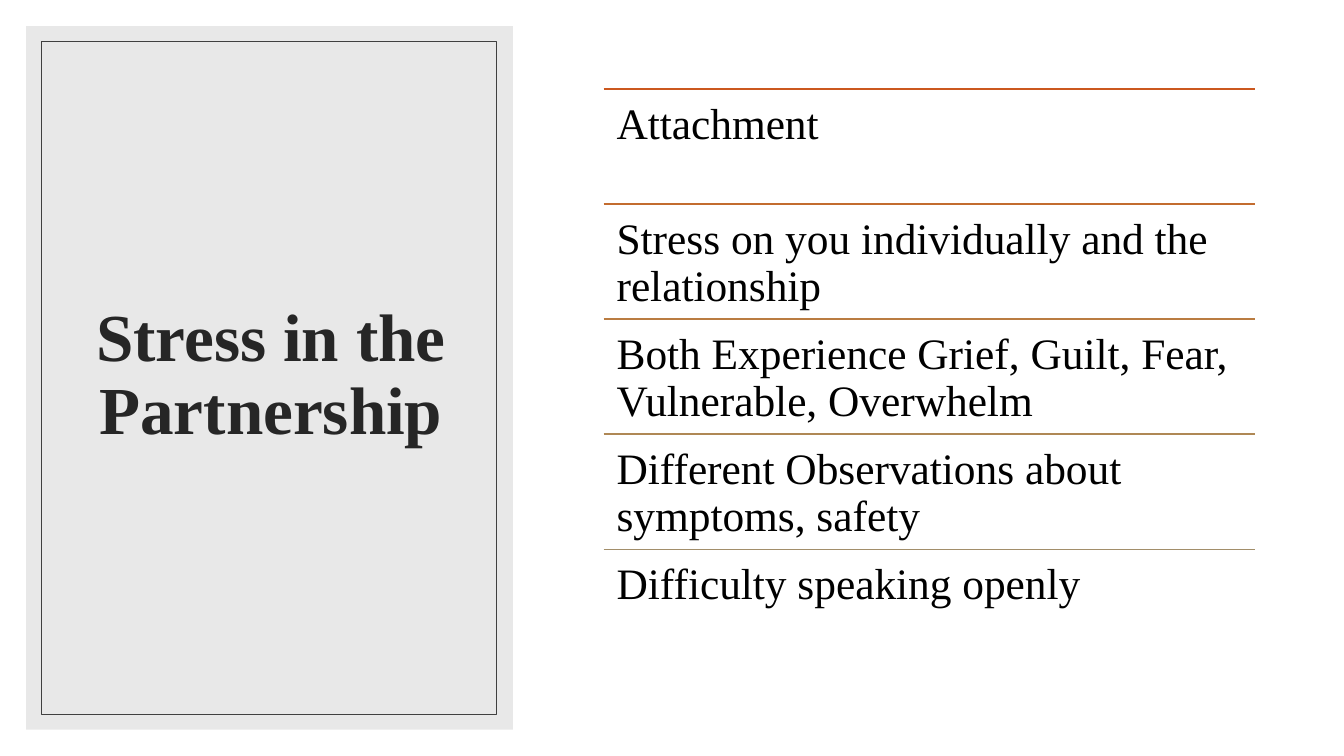
"""Build the slide about stress in the partnership."""
from dataclasses import dataclass
from typing import Any

import lxml.etree
import pptx
import pptx.dml.color
import pptx.enum.shapes
import pptx.enum.text
import pptx.oxml.ns
import pptx.util

Cm = pptx.util.Cm
Pt = pptx.util.Pt
qn = pptx.oxml.ns.qn

FONT = "Times New Roman"
ROW_LEFT, ROW_TOP, ROW_WIDTH, ROW_HEIGHT = 15.21, 2.24, 16.41, 2.9


@dataclass
class Topic:
    text: str
    rule_color: str


TOPICS = [
    Topic("Attachment", "CB581F"),
    Topic("Stress on you individually and the relationship", "C36C2F"),
    Topic("Both Experience Grief, Guilt, Fear, Vulnerable, Overwhelm", "BA7C41"),
    Topic("Different Observations about symptoms, safety", "AF8855"),
    Topic("Difficulty speaking openly", "A28E6A"),
]


def rgb(value: str) -> pptx.dml.color.RGBColor:
    return pptx.dml.color.RGBColor.from_string(value)


def set_attrs(obj: Any, values: dict[str, Any]) -> None:
    for name, value in values.items():
        setattr(obj, name, value)


def write(tf: Any, text: str, size: float, color: str, bold: bool, align: Any) -> None:
    p = tf.paragraphs[0]
    set_attrs(p, {"alignment": align, "line_spacing": 0.9})
    r = p.add_run()
    r.text = text
    set_attrs(r.font, {"name": FONT, "size": Pt(size), "bold": bold})
    r.font.color.rgb = rgb(color)


def add_rect(s: Any, left: float, top: float, width: float, height: float) -> Any:
    sp = s.shapes.add_shape(pptx.enum.shapes.MSO_SHAPE.RECTANGLE,
                            Cm(left), Cm(top), Cm(width), Cm(height))
    sp.shadow.inherit = False
    return sp


def add_panel(s: Any) -> None:
    panel = add_rect(s, 0.66, 0.66, 12.27, 17.73)
    panel.fill.solid()
    panel.fill.fore_color.rgb = rgb("D9D9D9")
    panel.line.fill.background()
    color = panel.fill._xPr.find(qn("a:solidFill"))[0]
    lxml.etree.SubElement(color, qn("a:alpha")).set("val", "60000")

    frame = add_rect(s, 1.04, 1.04, 11.46, 16.97)
    frame.fill.background()
    frame.line.color.rgb = rgb("404040")
    frame.line.width = Pt(0.5)


def add_title(s: Any, text: str) -> None:
    sp = s.shapes.title
    set_attrs(sp, {"left": Cm(1.6), "top": Cm(1.55), "width": Cm(10.46), "height": Cm(15.85)})
    set_attrs(sp.text_frame, {"word_wrap": True,
                              "vertical_anchor": pptx.enum.text.MSO_ANCHOR.MIDDLE,
                              "auto_size": pptx.enum.text.MSO_AUTO_SIZE.NONE})
    write(sp.text_frame, text, 48, "262626", True, pptx.enum.text.PP_ALIGN.CENTER)
    s.shapes._spTree.append(sp._element)


def add_topic(s: Any, topic: Topic, top: float) -> None:
    rule = s.shapes.add_connector(pptx.enum.shapes.MSO_CONNECTOR.STRAIGHT, Cm(ROW_LEFT), Cm(top),
                                  Cm(ROW_LEFT + ROW_WIDTH), Cm(top))
    rule.line.color.rgb = rgb(topic.rule_color)
    rule.line.width = Pt(1)
    lxml.etree.SubElement(rule._element.spPr, qn("a:effectLst"))

    sp = s.shapes.add_textbox(Cm(ROW_LEFT), Cm(top), Cm(ROW_WIDTH), Cm(ROW_HEIGHT))
    tf = sp.text_frame
    set_attrs(tf, {"word_wrap": True, "vertical_anchor": pptx.enum.text.MSO_ANCHOR.TOP})
    set_attrs(tf, {f"margin_{side}": Cm(0.33) for side in ("left", "top", "right", "bottom")})
    write(tf, topic.text, 31, "000000", False, pptx.enum.text.PP_ALIGN.LEFT)


def main() -> None:
    prs = pptx.Presentation()
    set_attrs(prs, {"slide_width": Cm(33.87), "slide_height": Cm(19.05)})
    s = prs.slides.add_slide(prs.slide_layouts.get_by_name("Title Only"))
    s.background.fill.solid()
    s.background.fill.fore_color.rgb = rgb("FFFFFF")
    add_panel(s)
    add_title(s, "Stress in the Partnership")
    for i, topic in enumerate(TOPICS):
        add_topic(s, topic, ROW_TOP + i * ROW_HEIGHT)
    prs.save("out.pptx")


if __name__ == "__main__":
    main()
